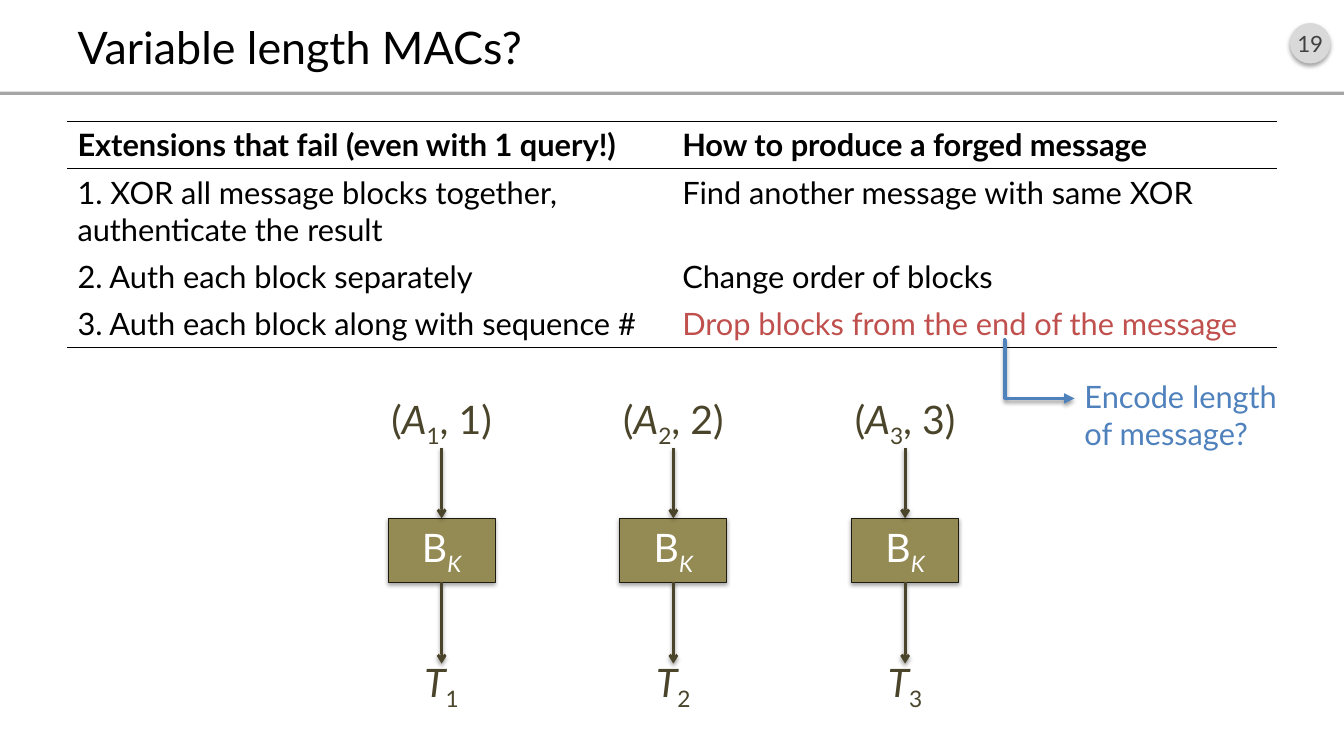
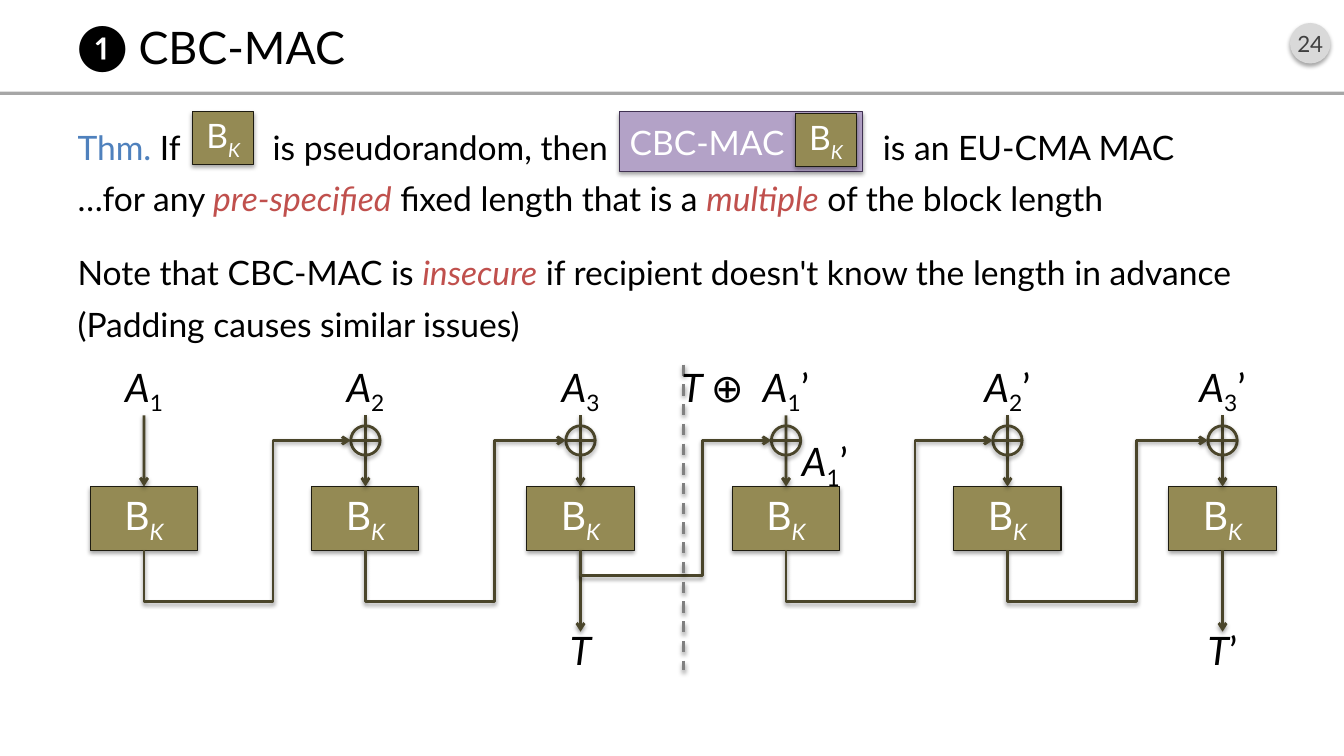
from dataclasses import dataclass
from typing import Optional, Sequence

from lxml import etree
from pptx import Presentation
from pptx import util as u
from pptx.dml import color as dml
from pptx.enum import dml as styles
from pptx.enum import shapes, text
from pptx.oxml.ns import qn

FONT = "Lato"
COLORS = {
    "black": "000000", "white": "FFFFFF", "red": "C0504D", "blue": "4F81BD",
    "olive": "948A54", "olive_edge": "1E1C11", "olive_dark": "4A452A",
    "purple": "B3A2C7", "purple_edge": "403152",
    "badge": "D9D9D9", "badge_text": "404040", "band": "A6A6A6", "divider": "808080",
}
NO_GRID_STYLE = "{2D5ABB26-0587-4C30-8999-92F81FD0307C}"
LEFT, CENTER = text.PP_ALIGN.LEFT, text.PP_ALIGN.CENTER
MARGIN, CONTENT_WIDTH = 1.7, 30.48
BLOCK_WIDTH, BLOCK_HEIGHT = 2.7, 1.61
LABEL_WIDTH, LABEL_HEIGHT = 3.91, 1.45
XOR_SIZE = 0.74


@dataclass(frozen=True)
class Piece:
    """A stretch of text with one look."""
    text: str
    italic: bool = False
    subscript: bool = False
    color: Optional[str] = None


@dataclass(frozen=True)
class Box:
    """Left, top, width and height in centimetres."""
    left: float
    top: float
    width: float
    height: float

    def lengths(self) -> list:
        return [u.Cm(v) for v in (self.left, self.top, self.width, self.height)]


@dataclass(frozen=True)
class Stage:
    """One block-cipher step of a diagram."""
    center: float
    label: Sequence[Piece]
    output: Sequence[Piece] = ()
    xor: bool = False


def variable(letter: str, index: str = "", mark: str = "") -> list:
    pieces = [Piece(letter, italic=True)]
    if index:
        pieces.append(Piece(index, subscript=True))
    return pieces + ([Piece(mark)] if mark else [])


CIPHER = [Piece("B"), Piece("K", italic=True, subscript=True)]


# Text and effects
def rgb(name: str) -> dml.RGBColor:
    return dml.RGBColor.from_string(COLORS[name])


def write(paragraph, pieces: Sequence[Piece], size: float, color: str,
          align=LEFT, bold: bool = False) -> None:
    font = paragraph.font
    font.name, font.size, font.bold = FONT, u.Pt(size), bold
    font.color.rgb = rgb(color)
    paragraph.alignment = align
    for piece in pieces:
        if piece.text == "\n":
            paragraph.add_line_break()
            continue
        run = paragraph.add_run()
        run.text = piece.text
        if piece.italic:
            run.font.italic = True
        if piece.color:
            run.font.color.rgb = rgb(piece.color)
        if piece.subscript:
            run.font._element.set("baseline", "-25000")


def add_shadow(shape, alpha: int, distance: float) -> None:
    effects = etree.SubElement(shape.element.spPr, qn("a:effectLst"))
    shadow = etree.SubElement(effects, qn("a:outerShdw"), blurRad=str(u.Pt(3.1)),
                              dist=str(u.Pt(distance)), dir="5400000", rotWithShape="0")
    tint = etree.SubElement(shadow, qn("a:srgbClr"), val=COLORS["black"])
    etree.SubElement(tint, qn("a:alpha"), val=str(alpha * 1000))


# Basic objects
def add_panel(slide, box: Box, fill: Optional[str], line: Optional[str] = None,
              line_width: float = 0.75, kind=shapes.MSO_SHAPE.RECTANGLE,
              shadow: bool = True):
    shape = slide.shapes.add_shape(kind, *box.lengths())
    if fill:
        shape.fill.solid()
        shape.fill.fore_color.rgb = rgb(fill)
    else:
        shape.fill.background()
    if line:
        shape.line.color.rgb = rgb(line)
        shape.line.width = u.Pt(line_width)
    else:
        shape.line.fill.background()
    if shadow:
        add_shadow(shape, 35, 1.8)
    else:
        shape.shadow.inherit = False
    return shape


def add_block(slide, box: Box, size: float = 28):
    block = add_panel(slide, box, "olive", "olive_edge")
    write(block.text_frame.paragraphs[0], CIPHER, size, "white", CENTER)
    return block


def add_label(slide, pieces: Sequence[Piece], box: Box, color: str = "black",
              size: float = 28, align=CENTER) -> None:
    frame = slide.shapes.add_textbox(*box.lengths()).text_frame
    frame.word_wrap = True
    write(frame.paragraphs[0], pieces, size, color, align)


def add_line(slide, start: tuple, end: tuple, color: str = "olive_dark", width: float = 2,
             head: Optional[str] = None, kind=shapes.MSO_CONNECTOR.STRAIGHT):
    points = [u.Cm(v) for v in (*start, *end)]
    connector = slide.shapes.add_connector(kind, *points)
    connector.line.color.rgb = rgb(color)
    connector.line.width = u.Pt(width)
    if head:
        etree.SubElement(connector.line._get_or_add_ln(), qn("a:tailEnd"), type=head)
    add_shadow(connector, 38, 1.6)
    return connector


def set_bends(connector, preset: str, *bends: float) -> None:
    geometry = connector.element.spPr.find(qn("a:prstGeom"))
    geometry.set("prst", preset)
    guides = geometry.find(qn("a:avLst"))
    names = ["adj1", "adj2"] if len(bends) > 1 else ["adj1"]
    for name, bend in zip(names, bends):
        etree.SubElement(guides, qn("a:gd"), name=name, fmla=f"val {round(bend * 100000)}")


# Diagram parts
def add_xor(slide, center: float, middle: float):
    left = center - XOR_SIZE / 2
    circle = add_panel(slide, Box(left, middle - XOR_SIZE / 2, XOR_SIZE, XOR_SIZE), None,
                       "olive_dark", 2, shapes.MSO_SHAPE.OVAL)
    add_line(slide, (left, middle), (left + XOR_SIZE, middle))
    return circle


def add_stage(slide, stage: Stage, block_top: float, label_top: float, color: str):
    """Draw label, arrow, block and output; return the block and its XOR circle."""
    left = stage.center - BLOCK_WIDTH / 2
    label_left = stage.center - LABEL_WIDTH / 2
    bottom = block_top + BLOCK_HEIGHT
    block = add_block(slide, Box(left, block_top, BLOCK_WIDTH, BLOCK_HEIGHT))
    arrow = add_line(slide, (stage.center, label_top + LABEL_HEIGHT),
                     (stage.center, block_top), head="arrow")
    arrow.end_connect(block, 0)
    add_label(slide, stage.label, Box(label_left, label_top, LABEL_WIDTH, LABEL_HEIGHT), color)
    if stage.output:
        tip = bottom + 2.05
        arrow = add_line(slide, (stage.center, bottom), (stage.center, tip), head="arrow")
        arrow.begin_connect(block, 2)
        add_label(slide, stage.output,
                  Box(label_left, tip - 0.25, LABEL_WIDTH, LABEL_HEIGHT), color)
    return block, add_xor(slide, stage.center, block_top - 1.16) if stage.xor else None


def add_feed(slide, block, circle, drop: float, turn: float) -> None:
    """Lead a block's output down, across and up into the next XOR circle."""
    start_x, start_y = block.left + block.width // 2, block.top + block.height
    end_x, end_y = circle.left, circle.top + circle.height // 2
    rise, reach = start_y - end_y, end_x - start_x
    feed = add_line(slide, (0, 0), (1, 1), head="arrow", kind=shapes.MSO_CONNECTOR.ELBOW)
    feed.begin_connect(block, 2)
    feed.end_connect(circle, 2)
    # The preset runs sideways, so its frame is turned a quarter about its centre
    feed.left, feed.top = (start_x + end_x - rise) // 2, (start_y + end_y - reach) // 2
    feed.width, feed.height = rise, reach
    frame = feed.element.spPr.find(qn("a:xfrm"))
    for name, value in (("rot", "5400000"), ("flipH", "1"), ("flipV", "1")):
        frame.set(name, value)
    set_bends(feed, "bentConnector4", -u.Cm(drop) / rise, u.Cm(turn) / reach)


# Title, band and page number
def add_page(presentation, layout: int, title: str, number: str):
    slide = presentation.slides.add_slide(presentation.slide_layouts[layout])
    heading = slide.shapes.title
    heading.left, heading.top, heading.width, heading.height = Box(
        MARGIN, 0.41, CONTENT_WIDTH, 1.52).lengths()
    heading.text_frame.auto_size = text.MSO_AUTO_SIZE.NONE
    heading.text_frame.vertical_anchor = text.MSO_ANCHOR.MIDDLE
    write(heading.text_frame.paragraphs[0], [Piece(title)], 32, "black")
    add_panel(slide, Box(0, 2.31, 33.87, 0.08), "band", shadow=False)
    badge = add_panel(slide, Box(32.51, 0.58, 1.02, 1.02), "badge",
                      kind=shapes.MSO_SHAPE.OVAL)
    badge.text_frame.margin_left = badge.text_frame.margin_right = 0
    write(badge.text_frame.paragraphs[0], [Piece(number)], 16, "badge_text", CENTER)
    return slide


def add_attack_table(slide) -> None:
    rows = [
        ("Extensions that fail (even with 1 query!)", "How to produce a forged message"),
        ("1. XOR all message blocks together, authenticate the result",
         "Find another message with same XOR"),
        ("2. Auth each block separately", "Change order of blocks"),
        ("3. Auth each block along with sequence #", "Drop blocks from the end of the message"),
    ]
    borders = {0: ("a:lnT", "a:lnB"), len(rows) - 1: ("a:lnB",)}
    box = Box(MARGIN, 3.06, CONTENT_WIDTH, 5.69)
    table = slide.shapes.add_table(len(rows), 2, *box.lengths()).table
    table.first_row = table.horz_banding = False
    table._tbl.tblPr.find(qn("a:tableStyleId")).text = NO_GRID_STYLE
    for r, row in enumerate(rows):
        table.rows[r].height = u.Cm(2.12 if r == 1 else 1.19)
        for c, content in enumerate(row):
            cell = table.cell(r, c)
            color = "red" if (r, c) == (3, 1) else "black"
            write(cell.text_frame.paragraphs[0], [Piece(content)], 22, color, bold=r == 0)
            properties = cell._tc.get_or_add_tcPr()
            for side in borders.get(r, ()):
                border = etree.SubElement(properties, qn(side), w=str(u.Pt(1)))
                fill = etree.SubElement(border, qn("a:solidFill"))
                etree.SubElement(fill, qn("a:srgbClr"), val=COLORS["black"])
            cell.fill.background()


def add_theorem(slide) -> None:
    paragraphs = [
        (8, [Piece("Thm. ", color="blue"), Piece("If")]),
        (8, [Piece("…for any "), Piece("pre-specified", True, color="red"),
             Piece(" fixed length that is a "), Piece("multiple", True, color="red"),
             Piece(" of the block length")]),
        (24, [Piece("Note that CBC-MAC is "), Piece("insecure", True, color="red"),
              Piece(" if recipient doesn't know the length in advance")]),
        (8, [Piece("(Padding causes similar issues)")]),
    ]
    top = 3.07
    body = slide.placeholders[1]
    body.left, body.top, body.width, body.height = Box(
        MARGIN, top, CONTENT_WIDTH, 14.6).lengths()
    frame = body.text_frame
    frame.auto_size = text.MSO_AUTO_SIZE.NONE
    for i, (space, pieces) in enumerate(paragraphs):
        paragraph = frame.add_paragraph() if i else frame.paragraphs[0]
        properties = paragraph._p.get_or_add_pPr()
        properties.set("marL", "0")
        properties.set("indent", "0")
        etree.SubElement(properties, qn("a:buNone"))
        paragraph.space_before = u.Pt(space)
        write(paragraph, pieces, 24, "black")
    # The first line continues after each of the blocks set into it
    for left, phrase in ((6.62, "is pseudorandom, then"), (22.0, "is an EU-CMA MAC")):
        add_label(slide, [Piece(phrase)], Box(left, top, 9.5, 1.27), size=24, align=LEFT)
    mac = add_panel(slide, Box(15.62, 2.82, 6.12, 1.5), "purple", "purple_edge")
    write(mac.text_frame.paragraphs[0], [Piece("CBC-MAC")], 24, "white")
    for left, block_top in ((20.04, 2.87), (4.85, 2.82)):
        add_block(slide, Box(left, block_top, 1.55, 1.32), 24)


# Slides
def build_variable_length(presentation) -> None:
    slide = add_page(presentation, 5, "Variable length MACs?", "19")
    add_attack_table(slide)
    for i in range(3):
        index = str(i + 1)
        label = [Piece("("), *variable("A", index), Piece(f", {index})")]
        stage = Stage(11.13 + 5.84 * i, label, variable("T", index))
        add_stage(slide, stage, 13.06, 9.83, "olive_dark")
    hint = add_line(slide, (25.34, 8.55), (27.08, 10.04), "blue", 2.5, "triangle",
                    shapes.MSO_CONNECTOR.ELBOW)
    set_bends(hint, "bentConnector3", -0.004)
    add_label(slide, [Piece("Encode length"), Piece("\n"), Piece("of message?")],
              Box(27.08, 9.4, 5.44, 2.13), "blue", 22, LEFT)


def build_cbc_mac(presentation) -> None:
    slide = add_page(presentation, 1, "❶ CBC-MAC", "24")
    add_theorem(slide)
    label_top = 9.02
    previous = None
    for chain, mark in enumerate(("", "’")):
        for i, center in enumerate((3.63, 9.21, 14.63)):
            stage = Stage(center + 16.18 * chain, variable("A", str(i + 1), mark),
                          variable("T", mark=mark) if i == 2 else (), bool(i or chain))
            block, circle = add_stage(slide, stage, 12.26, label_top, "black")
            if previous:
                drop, turn = (1.3, 3.25) if i else (0.64, 3.07)
                add_feed(slide, previous, circle, drop, turn)
            previous = block
    divider = add_line(slide, (17.22, 9.19), (17.22, 16.89), "divider")
    divider.line.dash_style = styles.MSO_LINE.DASH
    add_label(slide, [Piece("T ", italic=True), Piece("⊕")],
              Box(16.92, label_top, LABEL_WIDTH, LABEL_HEIGHT), align=LEFT)
    add_label(slide, variable("A", "1", "’"), Box(19.96, 10.9, 1.85, LABEL_HEIGHT), align=LEFT)


def main() -> None:
    presentation = Presentation()
    presentation.slide_width, presentation.slide_height = u.Cm(33.87), u.Cm(19.05)
    build_variable_length(presentation)
    build_cbc_mac(presentation)
    presentation.save("out.pptx")


if __name__ == "__main__":
    main()
